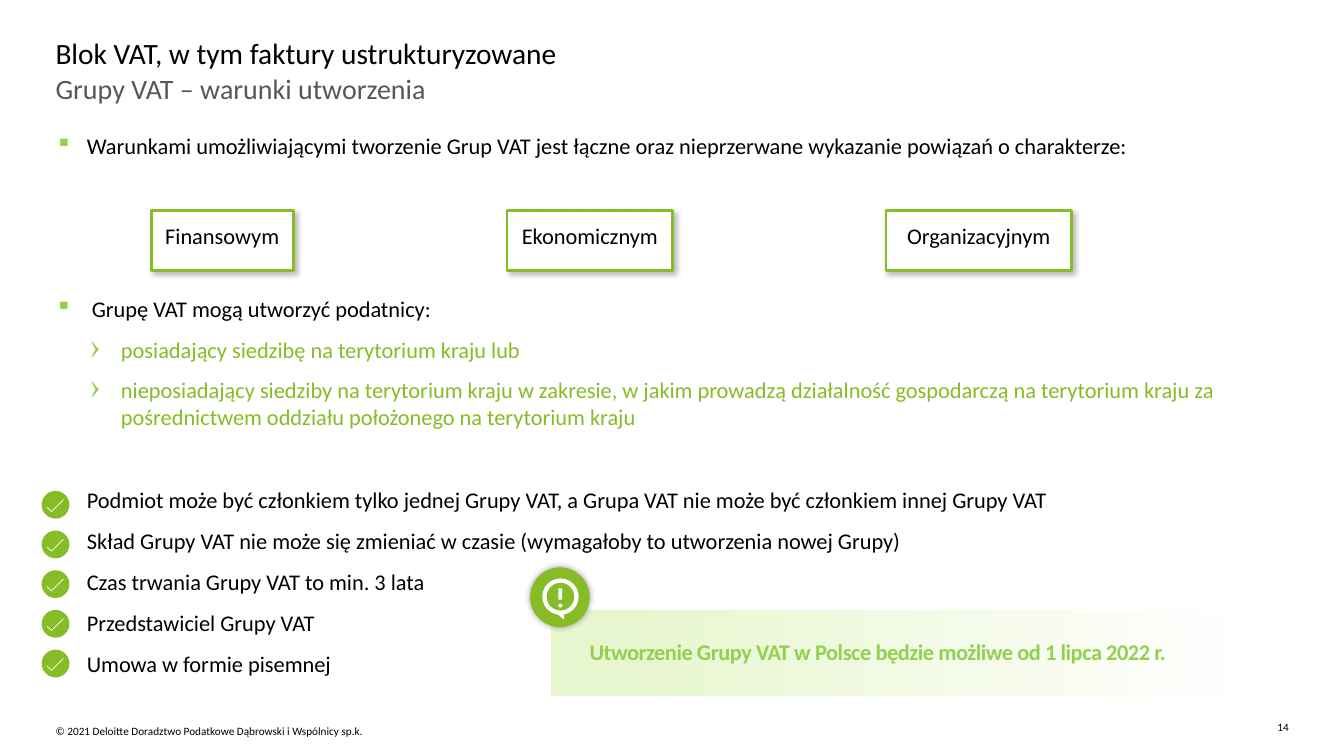
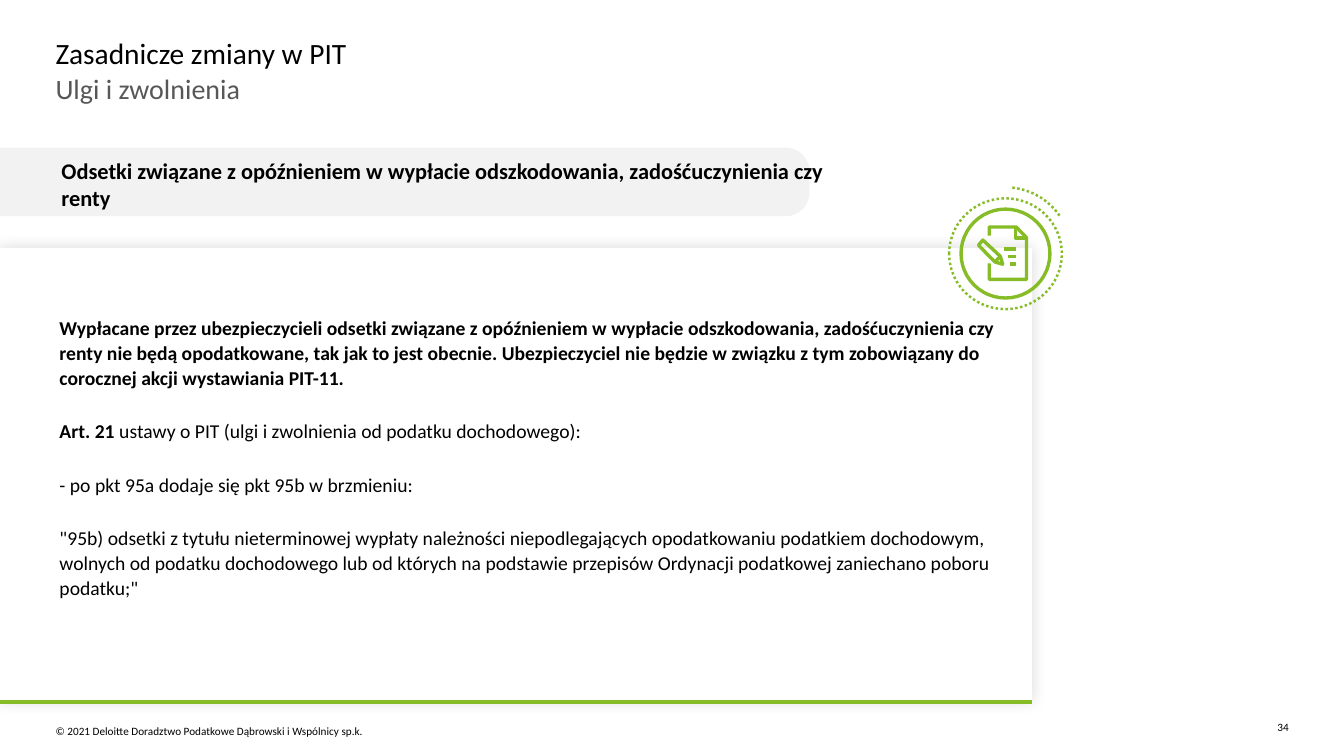
from dataclasses import dataclass
from lxml import etree
from pptx import Presentation
from pptx import util as u
from pptx.dml.color import RGBColor
from pptx.enum import dml, shapes, text
from pptx.oxml import ns

KIND = shapes.MSO_SHAPE
TOP, MIDDLE = text.MSO_ANCHOR.TOP, text.MSO_ANCHOR.MIDDLE


@dataclass(frozen=True)
class Theme:
    font: str = "Calibri"
    black: str = "000000"
    white: str = "FFFFFF"
    grey: str = "575757"
    band: str = "F2F2F2"
    green: str = "86BC25"
    lime: str = "92D050"
    pale: str = "E8F6CF"
    shade: str = "53565A"
    title: int = 21
    subtitle: int = 20
    body: int = 16
    article: int = 14
    footer: int = 8


@dataclass(frozen=True)
class Box:
    left: float
    top: float
    width: float
    height: float

    def inner(self, dx, dy, width, height):
        return Box(self.left + dx, self.top + dy, width, height)

    def lengths(self):
        return [u.Cm(n) for n in (self.left, self.top, self.width, self.height)]


THEME = Theme()
COPYRIGHT = "© 2021 Deloitte Doradztwo Podatkowe Dąbrowski i Wspólnicy sp.k."


def rgb(colour):
    return RGBColor.from_string(colour)


def apply(target, values):
    for name, value in values.items():
        setattr(target, name, value)


def add_xml(parent, tag, **attributes):
    return etree.SubElement(parent, ns.qn(tag), {k: str(v) for k, v in attributes.items()})


def add_bullet(paragraph, mark, percent):
    props = paragraph._p.get_or_add_pPr()
    add_xml(add_xml(props, "a:buClr"), "a:srgbClr", val=THEME.lime)
    add_xml(props, "a:buSzPct", val=percent * 1000)
    add_xml(props, "a:buChar", char=mark)


def write(frame, paragraphs, size, colour=THEME.black, insets=(0, 0, 0, 0),
          anchor=TOP, bold=False, spacing=None):
    apply(frame, {"word_wrap": True, "vertical_anchor": anchor})
    apply(frame, dict(zip(("margin_left", "margin_top", "margin_right", "margin_bottom"),
                          map(u.Cm, insets))))
    for index, entry in enumerate(paragraphs):
        paragraph = frame.paragraphs[0] if index == 0 else frame.add_paragraph()
        entry = entry if isinstance(entry, dict) else {"runs": [(entry, bold)]}
        margin, hanging = entry.get("indent", (0, 0))
        props = paragraph._p.get_or_add_pPr()
        props.set("marL", str(u.Cm(margin)))
        props.set("indent", str(u.Cm(hanging)))
        if "bullet" in entry:
            add_bullet(paragraph, *entry["bullet"])
        apply(paragraph, {"alignment": text.PP_ALIGN.LEFT, **(spacing or {})})
        if index == 0:
            paragraph.space_before = u.Pt(0)
        for words, weight in entry["runs"]:
            run = paragraph.add_run()
            run.text = words
            apply(run.font, {"name": THEME.font, "size": u.Pt(size), "bold": weight})
            run.font.color.rgb = rgb(entry.get("colour", colour))
    return frame


def add_text(slide, box, paragraphs, size, **options):
    label = slide.shapes.add_textbox(*box.lengths())
    return write(label.text_frame, paragraphs, size, **options)


def paint(shape, fill=None, line=None, weight=1.0, dash=None):
    shape.shadow.inherit = False
    if fill:
        shape.fill.solid()
        shape.fill.fore_color.rgb = rgb(fill)
    else:
        shape.fill.background()
    if line:
        apply(shape.line, {"width": u.Pt(weight), "dash_style": dash})
        shape.line.color.rgb = rgb(line)
    else:
        shape.line.fill.background()
    return shape


def add_shape(slide, kind, box, **look):
    return paint(slide.shapes.add_shape(kind, *box.lengths()), **look)


def add_outline(slide, box, points, closed=False, **look):
    spots = [((box.left + x) * 100, (box.top + y) * 100) for x, y in points]
    builder = slide.shapes.build_freeform(*spots[0], scale=u.Cm(0.01))
    builder.add_line_segments(spots[1:], close=closed)
    return paint(builder.convert_to_shape(), **look)


def add_rule(slide, x1, y1, x2, y2, weight):
    rule = slide.shapes.add_connector(shapes.MSO_CONNECTOR.STRAIGHT, *map(u.Cm, (x1, y1, x2, y2)))
    rule.line.width = u.Pt(weight)
    rule.line.color.rgb = rgb(THEME.green)
    add_xml(rule._element.spPr, "a:effectLst")


def cast_shadow(shape, colour, opacity, blur, distance=0, angle=0):
    effects = shape._element.spPr.find(ns.qn("a:effectLst"))
    shadow = add_xml(effects, "a:outerShdw", blurRad=u.Pt(blur), dist=u.Pt(distance),
                     dir=angle * 60000, algn="ctr" if distance == 0 else "tl", rotWithShape=0)
    add_xml(add_xml(shadow, "a:srgbClr", val=colour), "a:alpha", val=opacity * 1000)


def start_slide(deck, title, subtitle, number):
    slide = deck.slides.add_slide(deck.slide_layouts[6])
    add_text(slide, Box(1.4, 18.24, 14.88, 0.56), [COPYRIGHT], THEME.footer)
    page = add_text(slide, Box(31.62, 18.16, 0.86, 0.33), [number], THEME.footer)
    page.paragraphs[0].alignment = text.PP_ALIGN.RIGHT
    heading = Box(1.4, 0.89, 31.09, 0.94)
    add_text(slide, heading, [title], THEME.title)
    add_text(slide, heading.inner(0, 0.91, 31.09, 1.19), [subtitle], THEME.subtitle,
             colour=THEME.grey)
    return slide


def add_chip(slide, box, label):
    chip = add_shape(slide, KIND.RECTANGLE, box, fill=THEME.white, line=THEME.green, weight=2)
    cast_shadow(chip, THEME.shade, 40, 4, 3, 45)
    write(chip.text_frame, [label], THEME.body, insets=(0.3,) * 4)
    chip.text_frame.paragraphs[0].alignment = text.PP_ALIGN.CENTER


def add_check(slide, box):
    add_shape(slide, KIND.OVAL, box, fill=THEME.green)
    add_outline(slide, box, [(0.13, 0.41), (0.25, 0.52), (0.55, 0.22)],
                line=THEME.white, weight=0.5)


def add_conditions(slide, box, conditions):
    add_text(slide, box, [{"runs": [(words, False)], "indent": (0.79, 0)} for words in conditions],
             THEME.body, spacing={"space_after": u.Pt(10)})
    for row in range(len(conditions)):
        add_check(slide, box.inner(-0.35, 0.12 + row, 0.7, 0.7))


def add_alert_icon(slide, box):
    disc = add_shape(slide, KIND.OVAL, box, fill=THEME.green)
    cast_shadow(disc, THEME.black, 40, 5)
    add_shape(slide, KIND.OVAL, box.inner(0.71, 0.91, 0.1, 0.1), fill=THEME.white)
    add_shape(slide, KIND.RECTANGLE, box.inner(0.71, 0.53, 0.1, 0.28), fill=THEME.white)
    add_shape(slide, KIND.OVAL, box.inner(0.36, 0.33, 0.81, 0.81), line=THEME.white, weight=3)
    add_outline(slide, box, [(0.84, 1.14), (0.86, 1.32), (0.62, 1.12)], closed=True,
                fill=THEME.white)


def add_alert(slide, box, message):
    banner = add_shape(slide, KIND.RECTANGLE, box)
    banner.fill.gradient()
    banner.fill.gradient_angle = 0
    for stop, position, colour in zip(banner.fill.gradient_stops, (0.11, 1),
                                      (THEME.pale, THEME.white)):
        stop.position = position
        stop.color.rgb = rgb(colour)
    add_alert_icon(slide, box.inner(-0.53, -1.07, 1.5, 1.5))
    frame = add_text(slide, box.inner(0.97, 0.2, 14.83, 1.7), [message], THEME.body,
                     colour=THEME.lime, bold=True, anchor=MIDDLE)
    frame.paragraphs[0].runs[0].font._element.set("spc", "-30")


def add_document_icon(slide, box):
    stroke = {"line": THEME.green, "weight": 2.4}
    dots = {"line": THEME.green, "weight": 1.75, "dash": dml.MSO_LINE.ROUND_DOT}
    add_shape(slide, KIND.OVAL, box.inner(0.55, 0.55, 2.24, 2.24), **stroke)
    page = [(1.26, 1.22), (1.26, 1), (1.94, 1), (2.2, 1.27), (2.2, 2.32), (1.26, 2.32), (1.26, 1.92)]
    fold = [(1.92, 1), (1.92, 1.28), (2.2, 1.28)]
    pencil = [(0.99, 1.46), (1.1, 1.33), (1.54, 1.74), (1.6, 1.94), (1.4, 1.88)]
    tip = [(1.42, 1.86), (1.53, 1.75)]
    for points in (page, fold, pencil, tip):
        add_outline(slide, box, points, closed=points is pencil, **stroke)
    for start, y in ((1.64, 1.55), (1.73, 1.74), (1.79, 1.93)):
        add_rule(slide, box.left + start, box.top + y, box.left + 1.94, box.top + y, 2.4)
    add_shape(slide, KIND.OVAL, box.inner(0.25, 0.28, 2.84, 2.79), **dots)
    orbit = add_shape(slide, KIND.ARC, box, **dots)
    orbit.adjustments[0], orbit.adjustments[1] = 165.69, 196.35


def add_tab(slide, box, heading):
    turned = box.inner((box.width - box.height) / 2, (box.height - box.width) / 2,
                       box.height, box.width)
    tab = add_shape(slide, KIND.ROUND_2_SAME_RECTANGLE, turned, fill=THEME.band)
    tab.rotation = 90
    tab.adjustments[0], tab.adjustments[1] = 0.35, 0
    add_text(slide, box.inner(1.3, 0.11, 19.71, 1.63), [heading], THEME.body, bold=True,
             insets=(0.25, 0.13, 0.25, 0.13))


def add_card(slide, box, paragraphs):
    card = add_shape(slide, KIND.RECTANGLE, box, fill=THEME.white)
    cast_shadow(card, THEME.black, 15, 11)
    write(card.text_frame, [{"runs": runs, "indent": (1.25, 0)} for runs in paragraphs],
          THEME.article, insets=(0.25, 1.67, 0.25, 0.25),
          spacing={"line_spacing": 1.07, "space_before": u.Pt(12), "space_after": u.Pt(8)})
    bottom = box.top + box.height
    add_rule(slide, box.left, bottom, box.left + box.width, bottom, 3)


def build_vat_groups(deck):
    slide = start_slide(deck, "Blok VAT, w tym faktury ustrukturyzowane",
                        "Grupy VAT – warunki utworzenia", "14")
    square = {"indent": (0.79, -0.79), "bullet": ("▪", 100)}
    chevron = {"indent": (1.65, -0.79), "bullet": ("›", 150), "colour": THEME.green}
    after = {"space_after": u.Pt(10)}
    add_text(slide, Box(1.4, 3.33, 30.99, 0.8), [
        {"runs": [("Warunkami umożliwiającymi tworzenie Grup VAT jest łączne oraz nieprzerwane "
                   "wykazanie powiązań o charakterze:", False)], **square}],
        THEME.body, spacing=after)
    for label, left, width in (("Finansowym", 3.81, 3.58), ("Ekonomicznym", 12.78, 4.17),
                               ("Organizacyjnym", 22.33, 4.67)):
        add_chip(slide, Box(left, 5.3, width, 1.52), label)
    taxpayers = ((" Grupę VAT mogą utworzyć podatnicy:", square),
                 ("posiadający siedzibę na terytorium kraju lub", chevron),
                 ("nieposiadający siedziby na terytorium kraju w zakresie, w jakim prowadzą "
                  "działalność gospodarczą na terytorium kraju za pośrednictwem oddziału "
                  "położonego na terytorium kraju", chevron))
    add_text(slide, Box(1.4, 7.43, 30.99, 3.8),
             [{"runs": [(words, False)], **style} for words, style in taxpayers],
             THEME.body, spacing=after)
    add_conditions(slide, Box(1.4, 12.25, 30.99, 4.8), [
        "Podmiot może być członkiem tylko jednej Grupy VAT, a Grupa VAT nie może być "
        "członkiem innej Grupy VAT",
        "Skład Grupy VAT nie może się zmieniać w czasie (wymagałoby to utworzenia nowej Grupy)",
        "Czas trwania Grupy VAT to min. 3 lata",
        "Przedstawiciel Grupy VAT",
        "Umowa w formie pisemnej"])
    add_alert(slide, Box(13.89, 15.37, 17.68, 2.16),
              "Utworzenie Grupy VAT w Polsce będzie możliwe od 1 lipca 2022 r.")


def build_pit_reliefs(deck):
    slide = start_slide(deck, "Zasadnicze zmiany w PIT", "Ulgi i zwolnienia", "34")
    add_tab(slide, Box(0, 3.72, 20.4, 1.73),
            "Odsetki związane z opóźnieniem w wypłacie odszkodowania, zadośćuczynienia czy renty")
    add_card(slide, Box(0, 6.25, 26.01, 11.44), [
        [("Wypłacane przez ubezpieczycieli odsetki związane z opóźnieniem w wypłacie "
          "odszkodowania, zadośćuczynienia czy renty nie będą opodatkowane, tak jak to jest "
          "obecnie. Ubezpieczyciel nie będzie w związku z tym zobowiązany do corocznej akcji "
          "wystawiania PIT-11.", True)],
        [("Art. 21 ", True), ("ustawy o PIT (ulgi i zwolnienia od podatku dochodowego):", False)],
        [("- po pkt 95a dodaje się pkt 95b w brzmieniu:", False)],
        [('"95b) odsetki z tytułu nieterminowej wypłaty należności niepodlegających '
          "opodatkowaniu podatkiem dochodowym, wolnych od podatku dochodowego lub od których na "
          'podstawie przepisów Ordynacji podatkowej zaniechano poboru podatku;"', False)]])
    add_document_icon(slide, Box(23.67, 4.72, 3.33, 3.33))


def main():
    deck = Presentation()
    apply(deck, {"slide_width": u.Cm(33.87), "slide_height": u.Cm(19.05)})
    build_vat_groups(deck)
    build_pit_reliefs(deck)
    deck.save("out.pptx")


if __name__ == "__main__":
    main()
